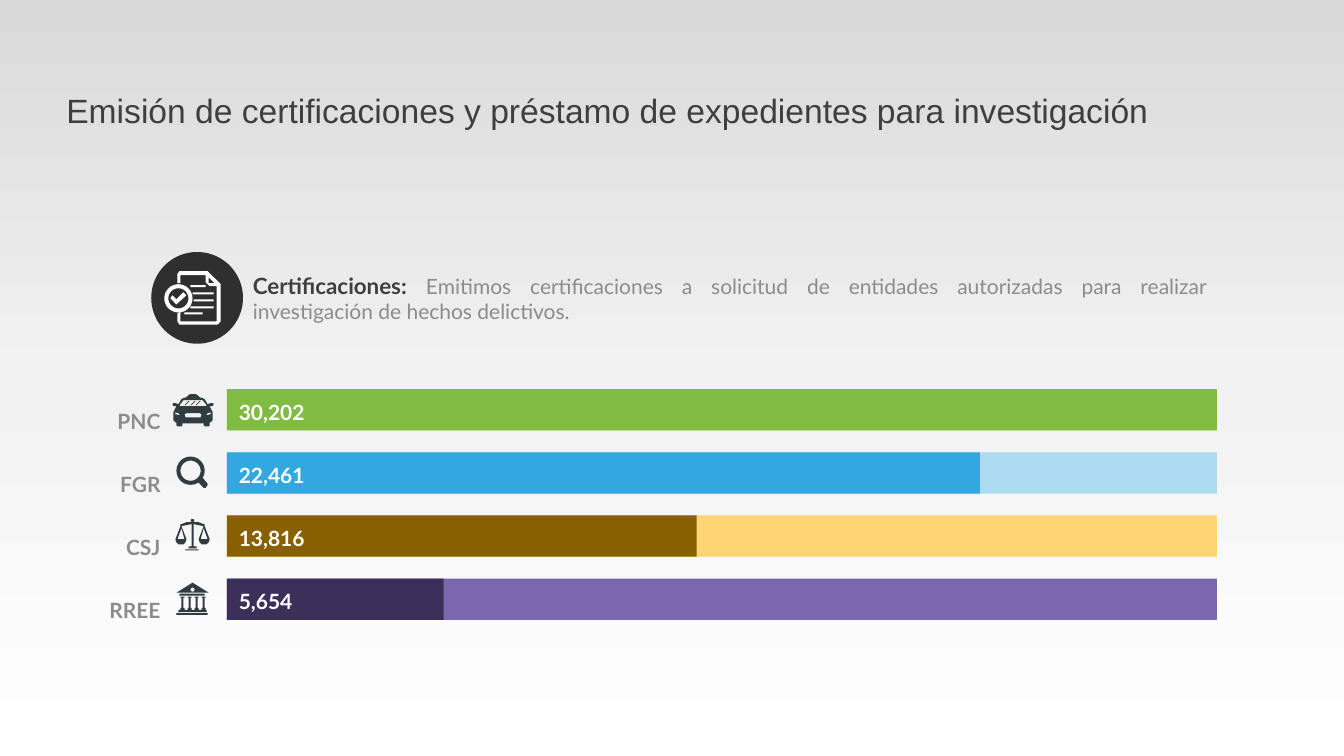
from copy import deepcopy
from math import cos, pi, sin

from pptx import Presentation
from pptx.dml.color import RGBColor
from pptx.enum.shapes import MSO_SHAPE
from pptx.enum.text import MSO_ANCHOR, MSO_AUTO_SIZE, PP_ALIGN
from pptx.oxml.ns import qn
from pptx.util import Inches, Pt

DARK, GRAY, WHITE, ICON = "3F3F3F", "8C8C8C", "FFFFFF", "313C41"

BAR_LEFT, BAR_WIDTH, BAR_HEIGHT = 2.25, 9.82, 0.41
FIRST_TOP, LAST_TOP = 3.86, 5.74
# entity, value, filled width, fill, track
ENTITIES = [
    ("PNC", "30,202", 9.82, "7FBC41", "CCE5B3"),
    ("FGR", "22,461", 7.47, "31A8DF", "ADDCF2"),
    ("CSJ", "13,816", 4.66, "896001", "FED474"),
    ("RREE", "5,654", 2.15, "3C305A", "7B67AD"),
]


def color(hex_string):
    return RGBColor.from_string(hex_string)


def box(left, top, right, bottom):
    return [(left, top), (right, top), (right, bottom), (left, bottom)]


def circle(x, y, radius, steps=48):
    angles = [2 * pi * step / steps for step in range(steps)]
    return [(x + radius * cos(a), y + radius * sin(a)) for a in angles]


def mirror(points, axis):
    return [(2 * axis - x, y) for x, y in reversed(points)]


def symmetric(points, axis):
    """Close a left half outline with its reflection."""
    return points + mirror(points, axis)


def car():
    axis = 1.915
    body = [(1.89, 3.91), (1.87, 3.92), (1.85, 3.94), (1.82, 3.95), (1.8, 3.96),
            (1.77, 4.01), (1.74, 4), (1.72, 4), (1.71, 4.01), (1.72, 4.03),
            (1.75, 4.03), (1.73, 4.07), (1.72, 4.09), (1.72, 4.17), (1.74, 4.19),
            (1.75, 4.19), (1.75, 4.22), (1.76, 4.23), (1.8, 4.23), (1.81, 4.22),
            (1.81, 4.2)]
    windscreen = [(1.82, 3.97), (1.78, 4.02), (1.79, 4.03)]
    grille = [(1.85, 4.1), (1.83, 4.11), (1.84, 4.14)]
    headlight = [(1.74, 4.09), (1.77, 4.1), (1.79, 4.12), (1.74, 4.11)]
    reflections = [
        [(x, 4.02), (x + 0.04, 3.98), (x + 0.05, 3.98), (x + 0.01, 4.02)]
        for x in (1.83, 1.89, 1.94)
    ]
    halves = [symmetric(half, axis) for half in (body, windscreen, grille)]
    return halves + [headlight, mirror(headlight, axis)] + reflections


def magnifier():
    handle = [(1.97, 4.79), (2.01, 4.74), (2.06, 4.8), (2.06, 4.81),
              (2.04, 4.84), (2.02, 4.84)]
    return [circle(1.89, 4.67, 0.14), circle(1.89, 4.67, 0.1), handle]


def scales():
    axis = 1.91
    arm = [(1.9, 5.15), (1.89, 5.16), (1.9, 5.18), (1.85, 5.18), (1.8, 5.2),
           (1.79, 5.2), (1.79, 5.22), (1.74, 5.35), (1.75, 5.38), (1.77, 5.4),
           (1.82, 5.4), (1.84, 5.38), (1.85, 5.35), (1.8, 5.22), (1.85, 5.21),
           (1.9, 5.2), (1.9, 5.42)]
    pan = [(1.8, 5.24), (1.76, 5.35), (1.83, 5.35)]
    return [symmetric(arm, axis), pan, mirror(pan, axis),
            box(1.87, 5.42, 1.95, 5.44), box(1.84, 5.45, 1.97, 5.46)]


def bank():
    parts = [[(1.75, 5.88), (1.91, 5.78), (2.07, 5.88)], circle(1.91, 5.85, 0.02),
             box(1.78, 5.89, 2.03, 5.91), box(1.77, 6.05, 2.05, 6.07),
             box(1.75, 6.08, 2.06, 6.1)]
    for column in range(4):
        x = 1.81 + 0.07 * column
        parts.append(symmetric([(x - 0.02, 5.92), (x - 0.02, 5.93), (x - 0.01, 5.93),
                                (x - 0.01, 6.03), (x - 0.02, 6.03), (x - 0.02, 6.05)], x))
    return parts


def checked_document():
    page = [(1.76, 2.81), (1.76, 2.72), (1.78, 2.69), (2.06, 2.69), (2.19, 2.82),
            (2.19, 3.19), (2.16, 3.22), (1.78, 3.22), (1.76, 3.19), (1.76, 3.11),
            (1.79, 3.1), (1.79, 3.19), (2.15, 3.19), (2.15, 2.84), (2.08, 2.84),
            (2.04, 2.8), (2.04, 2.73), (1.79, 2.73), (1.79, 2.81)]
    fold = [(2.13, 2.81), (2.07, 2.75), (2.07, 2.81)]
    check = [(1.85, 2.93), (1.75, 3.02), (1.69, 2.96), (1.71, 2.93),
             (1.75, 2.97), (1.82, 2.9)]
    lines = [(1.89, 2.83, 2.04), (1.91, 2.9, 2.12), (1.92, 2.97, 2.12),
             (1.89, 3.04, 2.12), (1.83, 3.1, 2.01)]
    return [page, fold, check, circle(1.77, 2.96, 0.14), circle(1.77, 2.96, 0.1)] + [
        box(left, top, right, top + 0.02) for left, top, right in lines]


class SlideBuilder:
    def __init__(self, slide, font="Lato"):
        self.slide = slide
        self.font = font

    def background(self, stops, angle):
        fill = self.slide.background.fill
        fill.gradient()
        fill.gradient_angle = angle
        stop_list = self.slide.element.find(".//" + qn("a:gsLst"))
        while len(stop_list) < len(stops):
            stop_list.append(deepcopy(stop_list[0]))
        for stop, (position, hex_string) in zip(fill.gradient_stops, stops):
            stop.position = position
            stop.color.rgb = color(hex_string)

    def paint(self, shape, fill):
        shape.shadow.inherit = False
        shape.fill.solid()
        shape.fill.fore_color.rgb = color(fill)
        shape.line.fill.background()

    def shape(self, kind, left, top, width, height, fill):
        shape = self.slide.shapes.add_shape(
            kind, Inches(left), Inches(top), Inches(width), Inches(height))
        self.paint(shape, fill)

    def icon(self, contours, fill):
        """Draw closed contours as one shape; nested contours are holes."""
        builder = None
        for contour in contours:
            start, *rest = [(Inches(x), Inches(y)) for x, y in contour]
            if builder is None:
                builder = self.slide.shapes.build_freeform(*start)
            else:
                builder.move_to(*start)
            builder.add_line_segments(rest, close=True)
        self.paint(builder.convert_to_shape(), fill)

    def text(self, left, top, width, height, paragraphs, align=PP_ALIGN.LEFT,
             spacing=None, anchor=MSO_ANCHOR.TOP, grow=True, font=None):
        """Each paragraph is a list of (text, size, color, bold) runs."""
        shape = self.slide.shapes.add_textbox(
            Inches(left), Inches(top), Inches(width), Inches(height))
        frame = shape.text_frame
        frame.word_wrap = True
        frame.vertical_anchor = anchor
        frame.auto_size = MSO_AUTO_SIZE.SHAPE_TO_FIT_TEXT if grow else MSO_AUTO_SIZE.NONE
        for index, runs in enumerate(paragraphs):
            paragraph = frame.add_paragraph() if index else frame.paragraphs[0]
            paragraph.alignment = align
            paragraph.line_spacing = spacing
            for content, size, hex_string, bold in runs:
                run = paragraph.add_run()
                run.text = content
                run.font.name = font or self.font
                run.font.size = Pt(size)
                run.font.bold = bold
                run.font.color.rgb = color(hex_string)


def main():
    presentation = Presentation()
    presentation.slide_width = Inches(13.33)
    presentation.slide_height = Inches(7.5)
    builder = SlideBuilder(presentation.slides.add_slide(presentation.slide_layouts[6]))
    builder.background([(0, "FFFFFF"), (0.5, "F2F2F2"), (1, "D9D9D9")], 90)

    title = "Emisión de certificaciones y préstamo de expedientes para investigación"
    builder.text(0.56, 0.57, 11.5, 1.09, [[(title, 24, DARK, False)]], spacing=0.9,
                 anchor=MSO_ANCHOR.MIDDLE, grow=False, font="Arial")
    description = ("Emitimos certificaciones a solicitud de entidades autorizadas "
                   "para realizar investigación de hechos delictivos.")
    builder.text(2.41, 2.65, 9.66, 0.62, [[("Certificaciones: ", 16, DARK, True),
                                           (description, 15, GRAY, False)]],
                 align=PP_ALIGN.JUSTIFY)
    builder.shape(MSO_SHAPE.OVAL, 1.5, 2.5, 0.91, 0.91, "2F2F2F")
    builder.icon(checked_document(), WHITE)

    pitch = (LAST_TOP - FIRST_TOP) / (len(ENTITIES) - 1)
    for row, (_, value, width, fill, track) in enumerate(ENTITIES):
        top = FIRST_TOP + row * pitch
        for bar_width, bar_color in ((BAR_WIDTH, track), (width, fill)):
            builder.shape(MSO_SHAPE.RECTANGLE, BAR_LEFT, top, bar_width, BAR_HEIGHT, bar_color)
        builder.text(2.27, top + 0.05, 1.28, 0.35, [[(value, 15, WHITE, True)]])
    builder.text(0.87, 3.63, 0.82, 2.63, [[(entity[0], 15, GRAY, True)] for entity in ENTITIES],
                 align=PP_ALIGN.RIGHT, spacing=2.5)
    for contours in (car(), magnifier(), scales(), bank()):
        builder.icon(contours, ICON)

    presentation.save("out.pptx")


if __name__ == "__main__":
    main()
